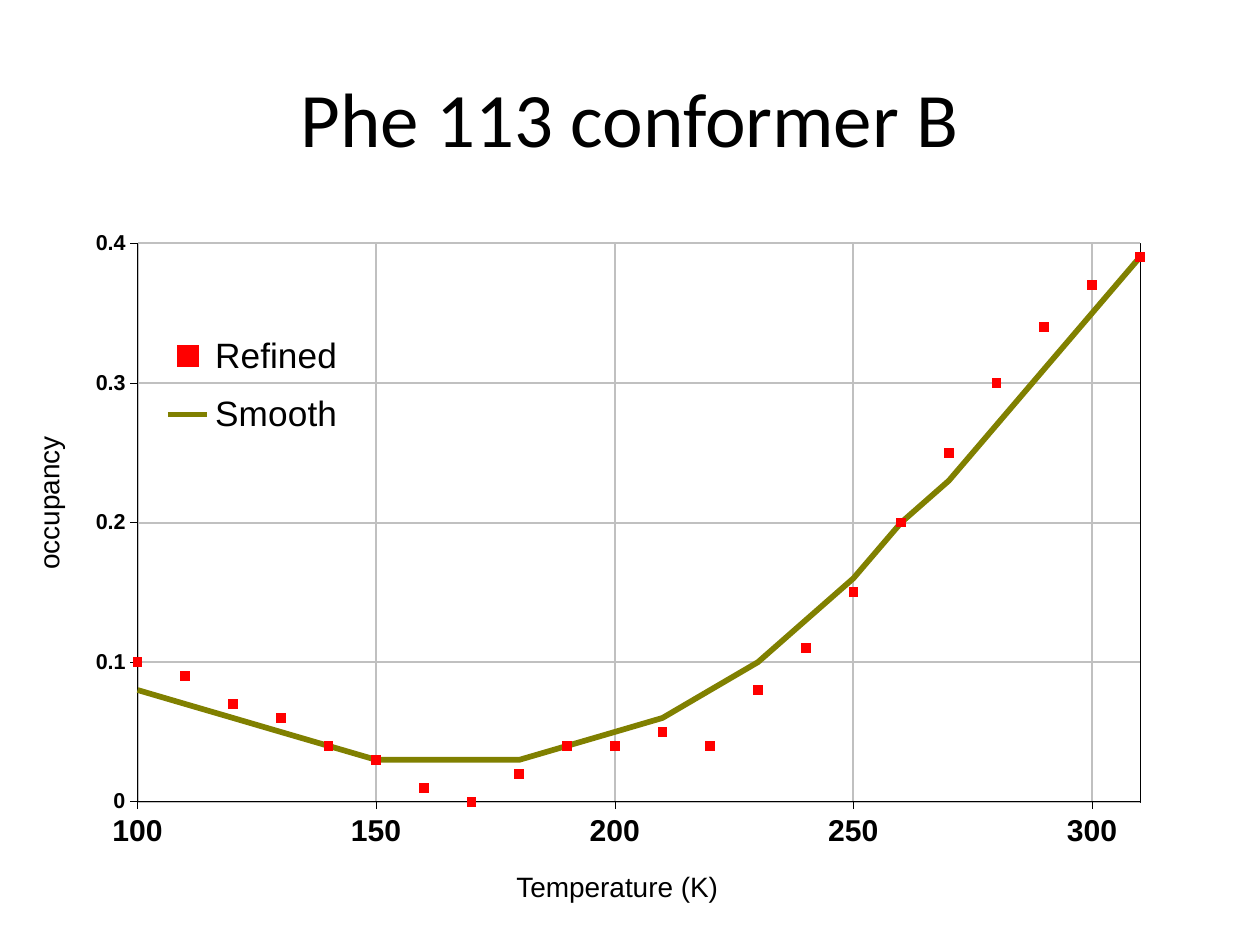
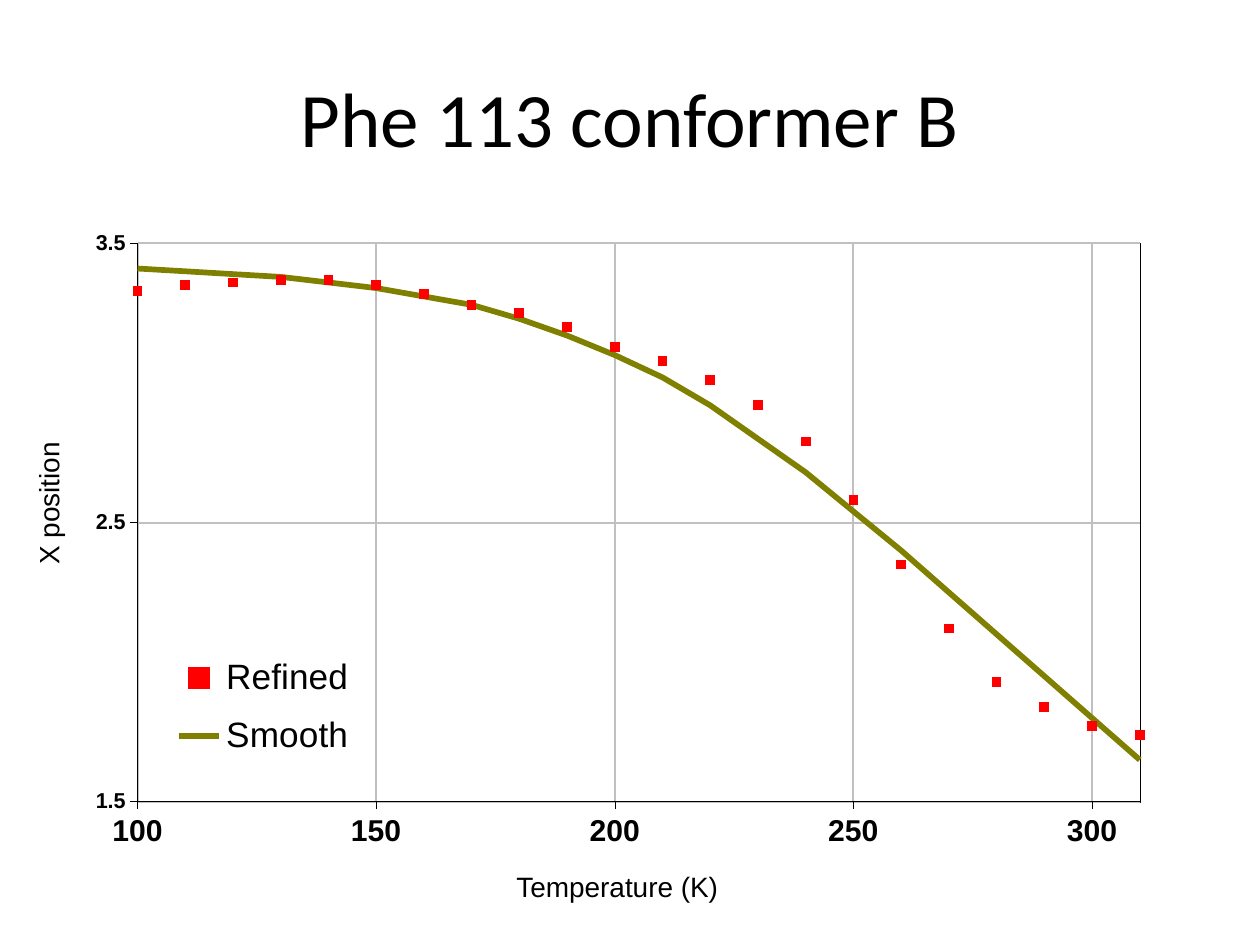
from dataclasses import dataclass

from lxml import etree
from pptx import Presentation
from pptx.chart.data import XyChartData
from pptx.dml.color import RGBColor
from pptx.enum.chart import XL_CHART_TYPE as ChartType
from pptx.enum.chart import XL_LEGEND_POSITION as LegendPosition
from pptx.enum.chart import XL_MARKER_STYLE as MarkerStyle
from pptx.enum.chart import XL_TICK_MARK as TickMark
from pptx.enum.text import MSO_ANCHOR as Anchor
from pptx.enum.text import MSO_AUTO_SIZE as AutoSize
from pptx.enum.text import PP_ALIGN as Align
from pptx.oxml import parse_xml
from pptx.oxml.ns import nsdecls, qn
from pptx.util import Inches, Pt

BLACK, GRID, RED, OLIVE = "000000", "C0C0C0", "FF0000", "808000"
TEMPERATURES = range(100, 311, 10)
TITLE = "Phe 113 conformer B"


@dataclass
class Label:
    text: str
    left: float
    top: float
    width: float
    height: float
    font: dict
    rotation: int = 0
    wrap: bool = False
    align: Align = Align.LEFT


@dataclass
class ValueAxis:
    minimum: float
    maximum: float
    step: float


@dataclass
class Plot:
    quantity: Label
    axis: ValueAxis
    legend_at: tuple[float, float]
    refined: list[float]
    smooth: list[float]


TITLE_FONT = {"name": "Calibri", "size": Pt(44)}
AXIS_FONT = {"name": "Arial", "size": Pt(16)}
SHARED_LABELS = [
    Label("Temperature (K)", 4, 6.85, 1.82, 0.37, AXIS_FONT),
    Label(TITLE, 0.5, 0.3, 9, 1.25, TITLE_FONT, wrap=True, align=Align.CENTER),
]

PLOTS = [
    Plot(
        Label("occupancy", -0.25, 3.8, 1.27, 0.37, AXIS_FONT, rotation=270),
        ValueAxis(0, 0.4, 0.1),
        (0.075, 0.14),
        [0.1, 0.09, 0.07, 0.06, 0.04, 0.03, 0.01, 0, 0.02, 0.04, 0.04,
         0.05, 0.04, 0.08, 0.11, 0.15, 0.2, 0.25, 0.3, 0.34, 0.37, 0.39],
        [0.08, 0.07, 0.06, 0.05, 0.04, 0.03, 0.03, 0.03, 0.03, 0.04, 0.05,
         0.06, 0.08, 0.1, 0.13, 0.16, 0.2, 0.23, 0.27, 0.31, 0.35, 0.39],
    ),
    Plot(
        Label("X position", -0.21, 3.8, 1.19, 0.37, AXIS_FONT, rotation=270),
        ValueAxis(1.5, 3.5, 1),
        (0.085, 0.64),
        [3.33, 3.35, 3.36, 3.37, 3.37, 3.35, 3.32, 3.28, 3.25, 3.2, 3.13,
         3.08, 3.01, 2.92, 2.79, 2.58, 2.35, 2.12, 1.93, 1.84, 1.77, 1.74],
        [3.41, 3.4, 3.39, 3.38, 3.36, 3.34, 3.31, 3.28, 3.23, 3.17, 3.1,
         3.02, 2.92, 2.8, 2.68, 2.54, 2.4, 2.25, 2.1, 1.95, 1.8, 1.65],
    ),
]


def color(value: str) -> RGBColor:
    return RGBColor.from_string(value)


def set_font(font, values: dict) -> None:
    for name, value in values.items():
        setattr(font, name, value)
    font.color.rgb = color(BLACK)


def set_line(line, value: str, width: float) -> None:
    line.color.rgb = color(value)
    line.width = Pt(width)


def add_label(page, label: Label) -> None:
    lengths = (label.left, label.top, label.width, label.height)
    box = page.shapes.add_textbox(*map(Inches, lengths))
    box.rotation = label.rotation
    frame = box.text_frame
    frame.word_wrap = label.wrap
    frame.auto_size = AutoSize.NONE if label.wrap else AutoSize.SHAPE_TO_FIT_TEXT
    frame.vertical_anchor = Anchor.MIDDLE if label.wrap else Anchor.TOP
    para = frame.paragraphs[0]
    para.alignment = label.align
    span = para.add_run()
    span.text = label.text
    set_font(span.font, label.font)


def set_layout(parent, index: int, box: tuple, inner: bool = False) -> None:
    """Place a chart part by fractions of the chart's size."""
    for old in parent.findall(qn("c:layout")):
        parent.remove(old)
    layout = etree.Element(qn("c:layout"))
    manual = etree.SubElement(layout, qn("c:manualLayout"))
    settings = [("layoutTarget", "inner")] if inner else []
    settings += [("xMode", "edge"), ("yMode", "edge"), *zip("xywh", box)]
    for name, value in settings:
        etree.SubElement(manual, qn(f"c:{name}")).set("val", str(value))
    parent.insert(index, layout)


def style_axis(axis, limits: ValueAxis, size: float) -> None:
    settings = {
        "minimum_scale": limits.minimum,
        "maximum_scale": limits.maximum,
        "major_unit": limits.step,
        "has_major_gridlines": True,
        "major_tick_mark": TickMark.OUTSIDE,
        "minor_tick_mark": TickMark.NONE,
    }
    for name, value in settings.items():
        setattr(axis, name, value)
    set_font(axis.tick_labels.font, {"name": "Arial", "size": Pt(size), "bold": True})
    set_line(axis.format.line, BLACK, 0.27)
    set_line(axis.major_gridlines.format.line, GRID, 1.09)


def add_plot(page, plot: Plot) -> None:
    data = XyChartData()
    for name, values in (("Refined", plot.refined), ("Smooth", plot.smooth)):
        series = data.add_series(name)
        for temperature, value in zip(TEMPERATURES, values):
            series.add_data_point(temperature, value)
    place = map(Inches, (0.6, 1.81, 8.78, 5.1))
    chart = page.shapes.add_chart(ChartType.XY_SCATTER, *place, data).chart
    chart.has_title = False
    chart.plots[0].vary_by_categories = False
    set_font(chart.font, {"name": "Arial", "size": Pt(17.2), "bold": True})
    style_axis(chart.category_axis, ValueAxis(100, 310, 50), 17.2)
    style_axis(chart.value_axis, plot.axis, 12.3)

    # Red squares for the refined values, a plain line for the smooth ones
    refined, smooth = chart.plots[0].series
    refined.format.line.fill.background()
    refined.marker.style = MarkerStyle.SQUARE
    refined.marker.size = 5
    refined.marker.format.fill.solid()
    refined.marker.format.fill.fore_color.rgb = color(RED)
    refined.marker.format.line.color.rgb = color(RED)
    smooth.marker.style = MarkerStyle.NONE
    set_line(smooth.format.line, OLIVE, 3.27)

    # Legend inside the framed plot area
    chart.has_legend = True
    legend = chart.legend
    legend.position = LegendPosition.RIGHT
    legend.include_in_layout = False
    set_font(legend.font, {"name": "Arial", "size": Pt(20.1), "bold": False})
    legend_xml = chart.element.find(".//" + qn("c:legend"))
    set_layout(legend_xml, 1, (*plot.legend_at, 0.17, 0.21))
    area = chart.element.find(".//" + qn("c:plotArea"))
    set_layout(area, 0, (0.056, 0.024, 0.906, 0.869), inner=True)
    area.append(parse_xml(
        f'<c:spPr {nsdecls("c", "a")}><a:noFill/><a:ln w="3175"><a:solidFill>'
        f'<a:srgbClr val="{BLACK}"/></a:solidFill></a:ln></c:spPr>'))


def main() -> None:
    deck = Presentation()
    deck.slide_width, deck.slide_height = Inches(10), Inches(7.5)
    for plot in PLOTS:
        page = deck.slides.add_slide(deck.slide_layouts[6])
        add_plot(page, plot)
        for label in (plot.quantity, *SHARED_LABELS):
            add_label(page, label)
    deck.save("out.pptx")


if __name__ == "__main__":
    main()
